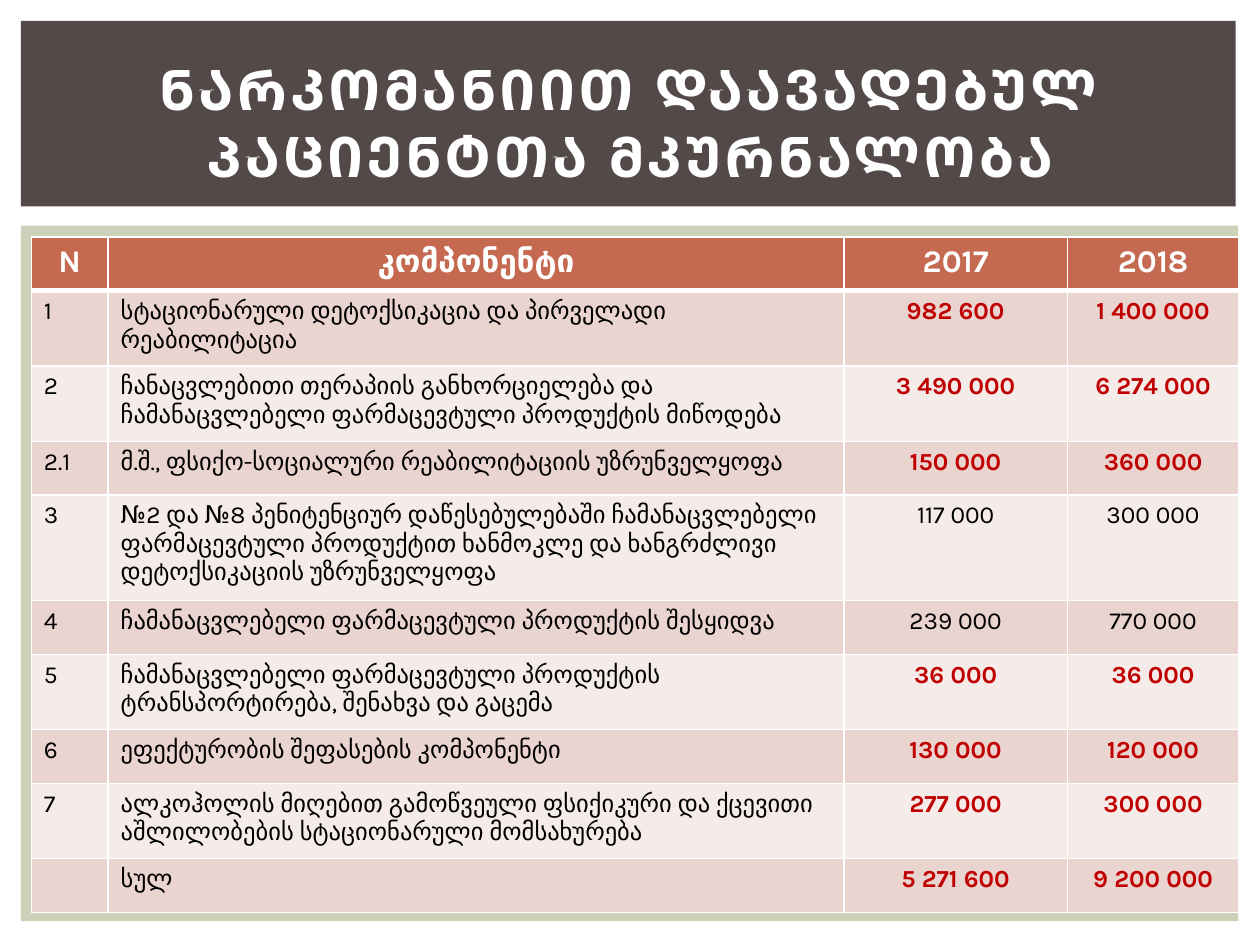
"""Build the slide on the budget for treating patients with drug addiction."""
import pptx
import pptx.dml.color
import pptx.enum.shapes
import pptx.enum.text
import pptx.oxml
import pptx.oxml.ns
import pptx.util
from dataclasses import dataclass

Cm = pptx.util.Cm
Pt = pptx.util.Pt
CENTER = pptx.enum.text.PP_ALIGN.CENTER
LEFT = pptx.enum.text.PP_ALIGN.LEFT


@dataclass(frozen=True)
class Theme:
    """Keep the colours and type sizes."""
    font: str = "Karla"
    title_size: int = 32
    header_size: int = 18
    body_size: int = 14
    white: str = "FFFFFF"
    black: str = "000000"
    accent: str = "C00000"
    banner: str = "534949"
    panel: str = "CCD1B9"
    header: str = "C66951"
    bands: tuple = ("EAD4D0", "F5EBE9")


TITLE = "ᲜᲐᲠᲙᲝᲛᲐᲜᲘᲘᲗ ᲓᲐᲐᲕᲐᲓᲔᲑᲣᲚ ᲞᲐᲪᲘᲔᲜᲢᲗᲐ ᲛᲙᲣᲠᲜᲐᲚᲝᲑᲐ"
HEADINGS = ("N", "კომპონენტი", "2017", "2018")
COMPONENTS = (
    ("1", "სტაციონარული დეტოქსიკაცია და პირველადი რეაბილიტაცია", "982 600", "1 400 000"),
    ("2", "ჩანაცვლებითი თერაპიის განხორციელება და ჩამანაცვლებელი ფარმაცევტული პროდუქტის მიწოდება",
     "3 490 000", "6 274 000"),
    ("2.1", "მ.შ., ფსიქო-სოციალური რეაბილიტაციის უზრუნველყოფა", "150 000", "360 000"),
    ("3", "№2 და №8 პენიტენციურ დაწესებულებაში ჩამანაცვლებელი ფარმაცევტული პროდუქტით "
     "ხანმოკლე და ხანგრძლივი დეტოქსიკაციის უზრუნველყოფა", "117 000", "300 000"),
    ("4", "ჩამანაცვლებელი ფარმაცევტული პროდუქტის შესყიდვა", "239 000", "770 000"),
    ("5", "ჩამანაცვლებელი ფარმაცევტული პროდუქტის ტრანსპორტირება, შენახვა და გაცემა",
     "36 000", "36 000"),
    ("6", "ეფექტურობის შეფასების კომპონენტი", "130 000", "120 000"),
    ("7", "ალკოჰოლის მიღებით გამოწვეული ფსიქიკური და ქცევითი აშლილობების სტაციონარული მომსახურება",
     "277 000", "300 000"),
    ("", "სულ", "5 271 600", "9 200 000"),
)
PLAIN_COMPONENTS = ("3", "4")
COLUMN_WIDTHS = (1.55, 14.83, 4.51, 3.45)
LINE_HEIGHTS = {1: 1.08, 2: 1.52, 3: 2.13}
ROW_LINES = (1, 2, 2, 1, 3, 1, 2, 1, 2, 1)


class SlideBuilder:
    """Hold the theme and the current slide, and add elements to it."""

    def __init__(self, slide, theme):
        """Keep the slide and its theme."""
        self.slide = slide
        self.theme = theme

    def color(self, value):
        """Return the colour object for a hex value."""
        return pptx.dml.color.RGBColor.from_string(value)

    def paint(self, fill, value):
        """Make a fill solid in the given colour."""
        fill.solid()
        fill.fore_color.rgb = self.color(value)

    def panel(self, left, top, width, height, value):
        """Add a plain rectangle without outline."""
        box = self.slide.shapes.add_shape(
            pptx.enum.shapes.MSO_SHAPE.RECTANGLE, Cm(left), Cm(top), Cm(width), Cm(height))
        box.shadow.inherit = False
        self.paint(box.fill, value)
        box.line.fill.background()

    def add_text(self, frame, text, size, value, bold, align):
        """Put one formatted run into the frame and return it."""
        para = frame.paragraphs[0]
        para.alignment = align
        span = para.add_run()
        span.text = text
        formats = {"name": self.theme.font, "size": Pt(size), "bold": bold}
        for name, setting in formats.items():
            setattr(span.font, name, setting)
        span.font.color.rgb = self.color(value)
        return span

    def title(self, text, left, top, width, height):
        """Add the letter-spaced title."""
        box = self.slide.shapes.add_textbox(Cm(left), Cm(top), Cm(width), Cm(height))
        frame = box.text_frame
        formats = {"word_wrap": True, "vertical_anchor": pptx.enum.text.MSO_ANCHOR.MIDDLE}
        for name, setting in formats.items():
            setattr(frame, name, setting)
        span = self.add_text(frame, text, self.theme.title_size, self.theme.white, True, CENTER)
        span.font._element.set("spc", "200")

    def borders(self, cell, widths):
        """Draw the white cell borders, given as points by side."""
        properties = cell._tc.get_or_add_tcPr()
        for position, (side, width) in enumerate(widths.items()):
            line = pptx.oxml.parse_xml(
                f'<a:ln{side} {pptx.oxml.ns.nsdecls("a")} w="{Pt(width)}"><a:solidFill>'
                f'<a:srgbClr val="{self.theme.white}"/></a:solidFill></a:ln{side}>')
            properties.insert(position, line)

    def cell_style(self, row, column, number):
        """Return size, colour, weight and alignment of a cell's text."""
        theme = self.theme
        if row == 0:
            return theme.header_size, theme.white, True, CENTER
        if column < 2:
            return theme.body_size, theme.black, False, LEFT
        strong = number not in PLAIN_COMPONENTS
        return theme.body_size, theme.accent if strong else theme.black, strong, CENTER

    def table(self, records, left, top):
        """Add the table with its header and banded rows."""
        heights = [LINE_HEIGHTS[lines] for lines in ROW_LINES]
        table = self.slide.shapes.add_table(
            len(records), len(COLUMN_WIDTHS), Cm(left), Cm(top),
            Cm(sum(COLUMN_WIDTHS)), Cm(sum(heights))).table
        for column, width in zip(table.columns, COLUMN_WIDTHS):
            column.width = Cm(width)
        for row, height in zip(table.rows, heights):
            row.height = Cm(height)
        for row, record in enumerate(records):
            fill = self.theme.bands[(row - 1) % 2] if row else self.theme.header
            widths = {"L": 1, "R": 1, "T": 3 if row == 1 else 1, "B": 1 if row else 3}
            for column, text in enumerate(record):
                cell = table.cell(row, column)
                self.paint(cell.fill, fill)
                self.borders(cell, widths)
                if text:
                    self.add_text(cell.text_frame, text, *self.cell_style(row, column, record[0]))


def main():
    """Build and save the deck."""
    deck = pptx.Presentation()
    deck.slide_width, deck.slide_height = Cm(25.4), Cm(19.05)
    theme = Theme()
    page = SlideBuilder(deck.slides.add_slide(deck.slide_layouts[6]), theme)
    page.panel(0.42, 4.55, 24.54, 14.02, theme.panel)
    page.panel(0.42, 0.42, 24.49, 3.74, theme.banner)
    page.table((HEADINGS, *COMPONENTS), 0.63, 4.78)
    page.title(TITLE, 1.06, 0.99, 23.29, 2.92)
    deck.save("out.pptx")


if __name__ == "__main__":
    main()
